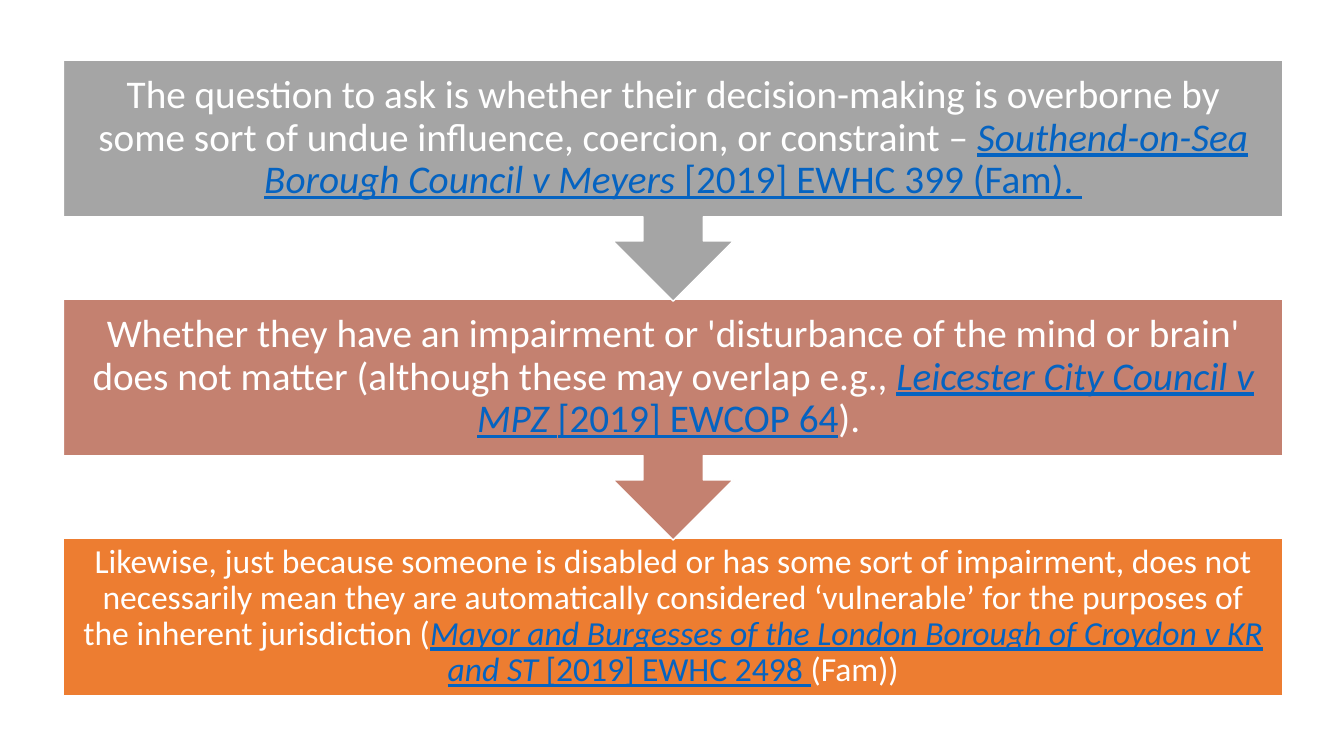
import dataclasses

import pptx
import pptx.dml.color
import pptx.enum.shapes
import pptx.enum.text
import pptx.util

Cm = pptx.util.Cm
Pt = pptx.util.Pt
RGB = pptx.dml.color.RGBColor.from_string
SHAPE = pptx.enum.shapes.MSO_SHAPE


@dataclasses.dataclass(frozen=True)
class Theme:
    font: str = "Calibri"
    large: int = 28
    small: int = 24
    text: str = "FFFFFF"
    link: str = "0563C1"
    outline: str = "FFFFFF"
    grey: str = "A5A5A5"
    rose: str = "C48170"
    orange: str = "ED7D31"


THEME = Theme()
LEFT, TOP, WIDTH, STEP = 1.6, 1.52, 30.73, 6.02
BOX_HEIGHT, CALLOUT_HEIGHT = 3.96, 6.07

# Each step: shape, height, fill, type size, inset, (lead, case name, citation, ending)
STEPS = [
    (SHAPE.DOWN_ARROW_CALLOUT, CALLOUT_HEIGHT, THEME.grey, THEME.large, 0.56, (
        "The question to ask is whether their decision-making is overborne by "
        "some sort of undue influence, coercion, or constraint – ",
        "Southend-on-Sea Borough Council v Meyers ",
        "[2019] EWHC 399 (Fam). ",
        "")),
    (SHAPE.DOWN_ARROW_CALLOUT, CALLOUT_HEIGHT, THEME.rose, THEME.large, 0.56, (
        "Whether they have an impairment or 'disturbance of the mind or brain' "
        "does not matter (although these may overlap e.g., ",
        "Leicester City Council v MPZ ",
        "[2019] EWCOP 64",
        "). ")),
    (SHAPE.RECTANGLE, BOX_HEIGHT, THEME.orange, THEME.small, 0.48, (
        "Likewise, just because someone is disabled or has some sort of "
        "impairment, does not necessarily mean they are automatically considered "
        "‘vulnerable’ for the purposes of the inherent jurisdiction (",
        "Mayor and Burgesses of the London Borough of Croydon v KR and ST",
        " [2019] EWHC 2498 ",
        "(Fam))")),
]


def add_run(p, text, color, italic=False, underline=False):
    r = p.add_run()
    r.text = text
    r.font.color.rgb = RGB(color)
    r.font.italic = italic
    r.font.underline = underline


def write_step(sp, size, inset, parts):
    """Fill a step with its statement and the underlined case it cites."""
    tf = sp.text_frame
    tf.word_wrap = True
    tf.vertical_anchor = pptx.enum.text.MSO_ANCHOR.MIDDLE
    tf.margin_left = tf.margin_right = Cm(inset)
    tf.margin_top = tf.margin_bottom = Cm(inset)
    p = tf.paragraphs[0]
    p.alignment = pptx.enum.text.PP_ALIGN.CENTER
    p.line_spacing = 0.9
    p.font.name = THEME.font
    p.font.size = Pt(size)
    lead, case, citation, ending = parts
    add_run(p, lead, THEME.text)
    add_run(p, case, THEME.link, italic=True, underline=True)
    add_run(p, citation, THEME.link, underline=True)
    if ending:
        add_run(p, ending, THEME.text)


def add_step(slide, index, shape, height, fill, size, inset, parts):
    sp = slide.shapes.add_shape(
        shape, Cm(LEFT), Cm(TOP + index * STEP), Cm(WIDTH), Cm(height))
    sp.shadow.inherit = False
    sp.fill.solid()
    sp.fill.fore_color.rgb = RGB(fill)
    sp.line.color.rgb = RGB(THEME.outline)
    sp.line.width = Pt(1)
    write_step(sp, size, inset, parts)


def main():
    prs = pptx.Presentation()
    prs.slide_width, prs.slide_height = Cm(33.87), Cm(19.05)
    slide = prs.slides.add_slide(prs.slide_layouts[6])
    # The last step goes first so that each arrow tip overlaps the box below it
    for index, step in reversed(list(enumerate(STEPS))):
        add_step(slide, index, *step)
    prs.save("out.pptx")


if __name__ == "__main__":
    main()
